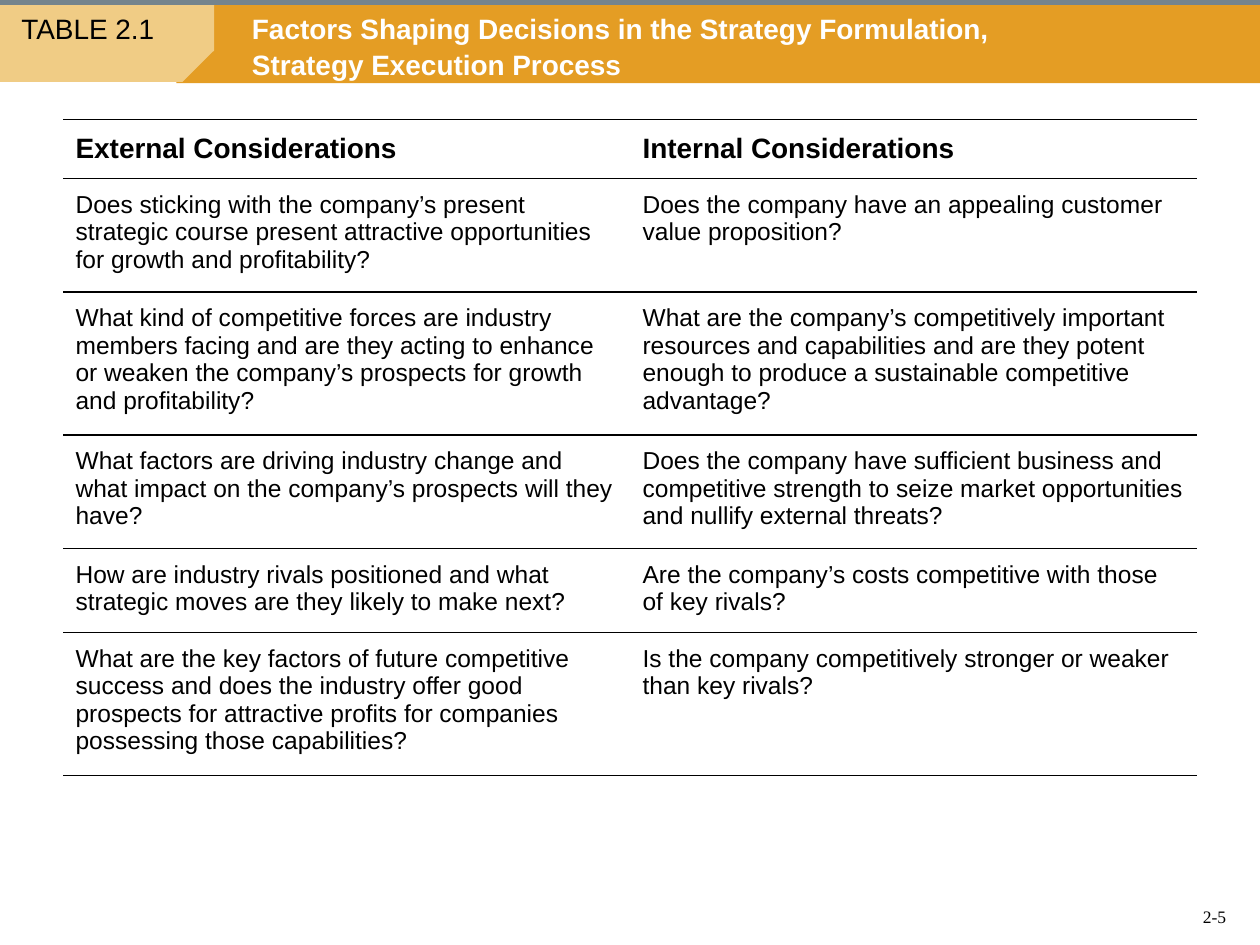
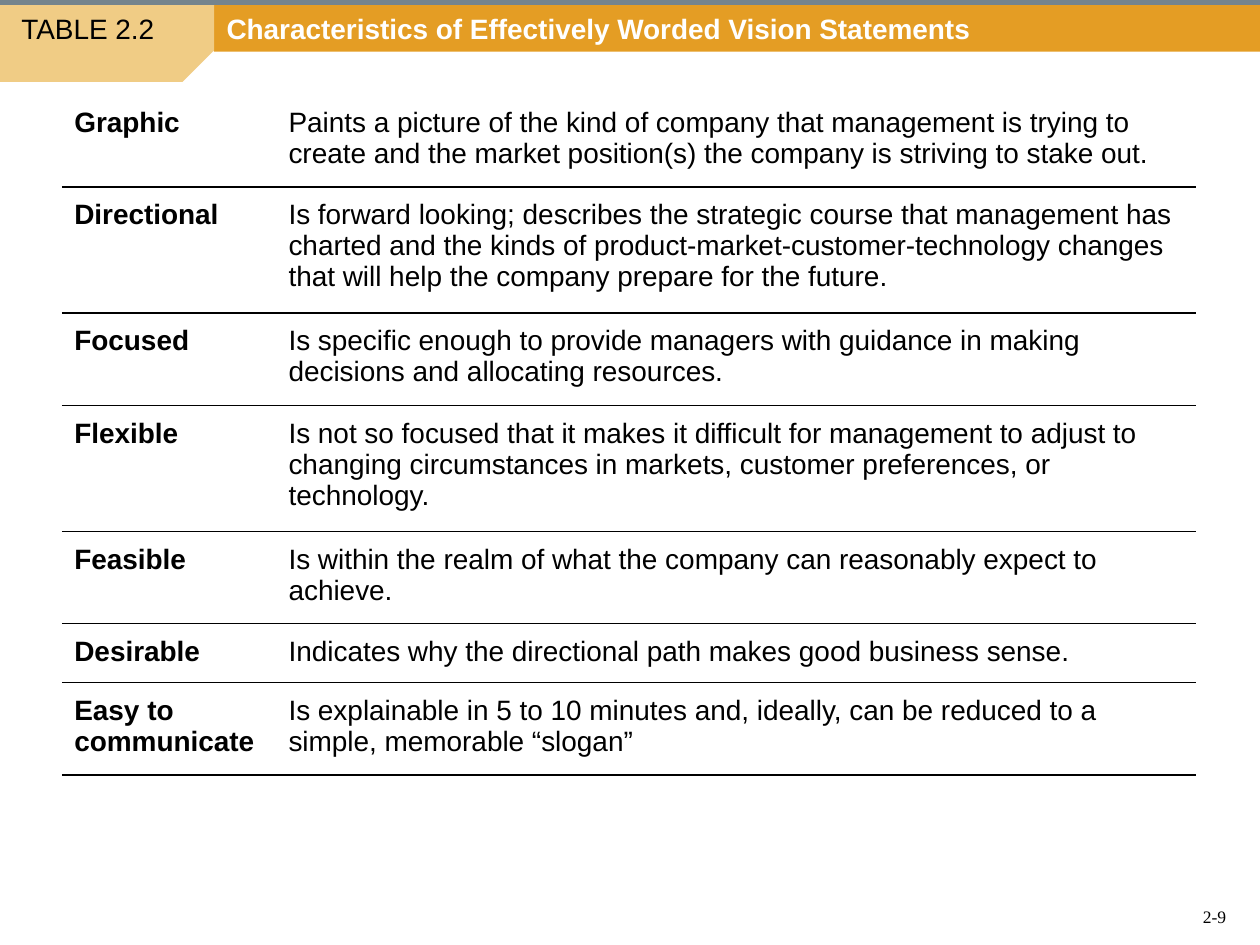
from lxml.etree import SubElement
from pptx import Presentation
from pptx.dml.color import RGBColor
from pptx.enum.shapes import MSO_CONNECTOR as Connector, MSO_SHAPE as Shape
from pptx.enum.text import MSO_ANCHOR as Anchor, PP_ALIGN as Align
from pptx.oxml.ns import qn
from pptx.util import Inches, Pt

BLACK = RGBColor(0x00, 0x00, 0x00)
WHITE = RGBColor(0xFF, 0xFF, 0xFF)
ORANGE = RGBColor(0xE4, 0x9D, 0x24)
SAND = RGBColor(0xF0, 0xCC, 0x85)
SLATE = RGBColor(0x74, 0x84, 0x8D)

LABEL = {"name": "Arial", "size": Pt(16), "bold": False}
TITLE = {**LABEL, "bold": True}
BODY = {**LABEL, "size": Pt(14)}
NUMBER = {**LABEL, "name": "Times New Roman", "size": Pt(10)}

PLAIN_TABLE = "{2D5ABB26-0587-4C30-8999-92F81FD0307C}"
PAGE_WIDTH = 10
CELL_MARGIN = 0.1

# Each table row: number of text lines, left text, right text
CONSIDERATIONS = [
    (1, "External Considerations", "Internal Considerations"),
    (3, "Does sticking with the company’s present strategic course present "
        "attractive opportunities for growth and profitability?",
     "Does the company have an appealing customer value proposition?"),
    (4, "What kind of competitive forces are industry members facing and are they "
        "acting to enhance or weaken the company’s prospects for growth and profitability?",
     "What are the company’s competitively important resources and capabilities and "
     "are they potent enough to produce a sustainable competitive\nadvantage?"),
    (3, "What factors are driving industry change and what impact on the company’s "
        "prospects will they have?",
     "Does the company have sufficient business and competitive strength to seize "
     "market opportunities and nullify external threats?"),
    (2, "How are industry rivals positioned and what strategic moves are they likely "
        "to make next?",
     "Are the company’s costs competitive with those of key rivals?"),
    (4, "What are the key factors of future competitive success and does the industry "
        "offer good prospects for attractive profits for companies\n"
        "possessing those capabilities?",
     "Is the company competitively stronger or weaker than key rivals?"),
]
CHARACTERISTICS = [
    (2, "Graphic", "Paints a picture of the kind of company that management is trying "
        "to create and the market position(s) the company is striving to stake out."),
    (3, "Directional", "Is forward looking; describes the strategic course that "
        "management has charted and the kinds of product-market-customer-technology "
        "changes that will help the company prepare for the future."),
    (2, "Focused", "Is specific enough to provide managers with guidance in making "
        "decisions and allocating resources."),
    (3, "Flexible", "Is not so focused that it makes it difficult for management to "
        "adjust to changing circumstances in markets, customer preferences, or technology."),
    (2, "Feasible", "Is within the realm of what the company can reasonably expect to achieve."),
    (1, "Desirable", "Indicates why the directional path makes good business sense."),
    (2, "Easy to communicate", "Is explainable in 5 to 10 minutes and, ideally, can be "
        "reduced to a simple, memorable “slogan”"),
]


class TableDeck:
    """Holds the deck, its style and the current page."""

    def __init__(self):
        self.deck = Presentation()
        self.deck.slide_width = Inches(PAGE_WIDTH)
        self.deck.slide_height = Inches(7.5)
        self.page = None

    def set_text(self, frame, text, style, color=BLACK, align=Align.LEFT, spacing=None):
        frame.word_wrap = True
        frame.text = text
        for para in frame.paragraphs:
            para.alignment = align
            para.line_spacing = spacing
            for span in para.runs:
                for name, value in style.items():
                    setattr(span.font, name, value)
                span.font.color.rgb = color

    def text(self, place, text, style, anchor=Anchor.TOP, align=Align.LEFT, side_margin=0.1):
        frame = self.page.shapes.add_textbox(*map(Inches, place)).text_frame
        frame.margin_left = frame.margin_right = Inches(side_margin)
        frame.vertical_anchor = anchor
        self.set_text(frame, text, style, align=align)

    def block(self, kind, place, color):
        box = self.page.shapes.add_shape(kind, *map(Inches, place))
        box.shadow.inherit = False
        box.fill.solid()
        box.fill.fore_color.rgb = color
        box.line.fill.background()
        return box

    def rule(self, top):
        line = self.page.shapes.add_connector(
            Connector.STRAIGHT, 0, Inches(top), Inches(PAGE_WIDTH), Inches(top))
        line.line.color.rgb = SLATE
        line.line.width = Pt(3)
        SubElement(line.element.spPr, qn("a:effectLst"))

    def start_page(self, label, title, number, band, indent=0.1, spacing=None):
        self.page = self.deck.slides.add_slide(self.deck.slide_layouts[6])
        self.text((7.43, 7.03, 2.4, 0.38), number, NUMBER, Anchor.BOTTOM, Align.RIGHT)

        # Title band
        frame = self.block(Shape.RECTANGLE, band, ORANGE).text_frame
        frame.margin_left = Inches(indent)
        frame.vertical_anchor = Anchor.TOP
        self.set_text(frame, title, TITLE, WHITE, spacing=spacing)

        # Label tab, with its cut corner at the bottom
        tab = self.block(Shape.SNIP_1_RECTANGLE, (0, 0.04, 1.7, 0.61), SAND)
        tab.adjustments[0] = 0.41
        tab.element.spPr.xfrm.set("flipV", "1")
        self.rule(0.02)
        self.text((0.17, 0.04, 1.51, 0.37), label, LABEL, side_margin=0)

    def border(self, cell, tags):
        properties = cell._tc.get_or_add_tcPr()
        for position, tag in enumerate(tags):
            line = properties.makeelement(qn(tag), {"w": str(Pt(1))})
            fill = SubElement(line, qn("a:solidFill"))
            SubElement(fill, qn("a:srgbClr"), val=str(BLACK))
            properties.insert(position, line)

    def table(self, left, top, widths, rows, style_of, top_border):
        """style_of(row, column) gives the text style of a cell."""
        heights = [2 * CELL_MARGIN + lines * style_of(index, 0)["size"].inches * 1.2
                   for index, (lines, *_) in enumerate(rows)]
        place = (left, top, sum(widths), sum(heights))
        table = self.page.shapes.add_table(
            len(rows), len(widths), *map(Inches, place)).table
        table.first_row = table.horz_banding = False
        table._tbl.tblPr.find(qn("a:tableStyleId")).text = PLAIN_TABLE
        for column, width in zip(table.columns, widths):
            column.width = Inches(width)
        for index, (_, *texts) in enumerate(rows):
            table.rows[index].height = Inches(heights[index])
            for column, text in enumerate(texts):
                cell = table.cell(index, column)
                for side in ("left", "right", "top", "bottom"):
                    setattr(cell, f"margin_{side}", Inches(CELL_MARGIN))
                cell.fill.background()
                self.set_text(cell.text_frame, text, style_of(index, column))
                has_top = index > 0 or top_border
                self.border(cell, ["a:lnT", "a:lnB"] if has_top else ["a:lnB"])
        return table


def main():
    slides = TableDeck()

    # Table 2.1
    slides.start_page(
        "TABLE 2.1",
        "Factors Shaping Decisions in the Strategy Formulation, \vStrategy Execution Process",
        "2-5", band=(1.4, 0.02, 8.6, 0.64), indent=0.6, spacing=1.08)
    table = slides.table(0.5, 0.95, (4.5, 4.5), CONSIDERATIONS,
                         lambda row, column: BODY if row else TITLE, top_border=True)
    for cell in table.rows[0].cells:
        cell.vertical_anchor = Anchor.MIDDLE

    # Table 2.2
    slides.start_page(
        "TABLE 2.2", "Characteristics of Effectively Worded Vision Statements",
        "2-9", band=(1.7, 0.04, 8.3, 0.37))
    slides.table(0.49, 0.75, (1.7, 7.3), CHARACTERISTICS,
                 lambda row, column: LABEL if column else TITLE, top_border=False)

    slides.deck.save("out.pptx")


if __name__ == "__main__":
    main()
